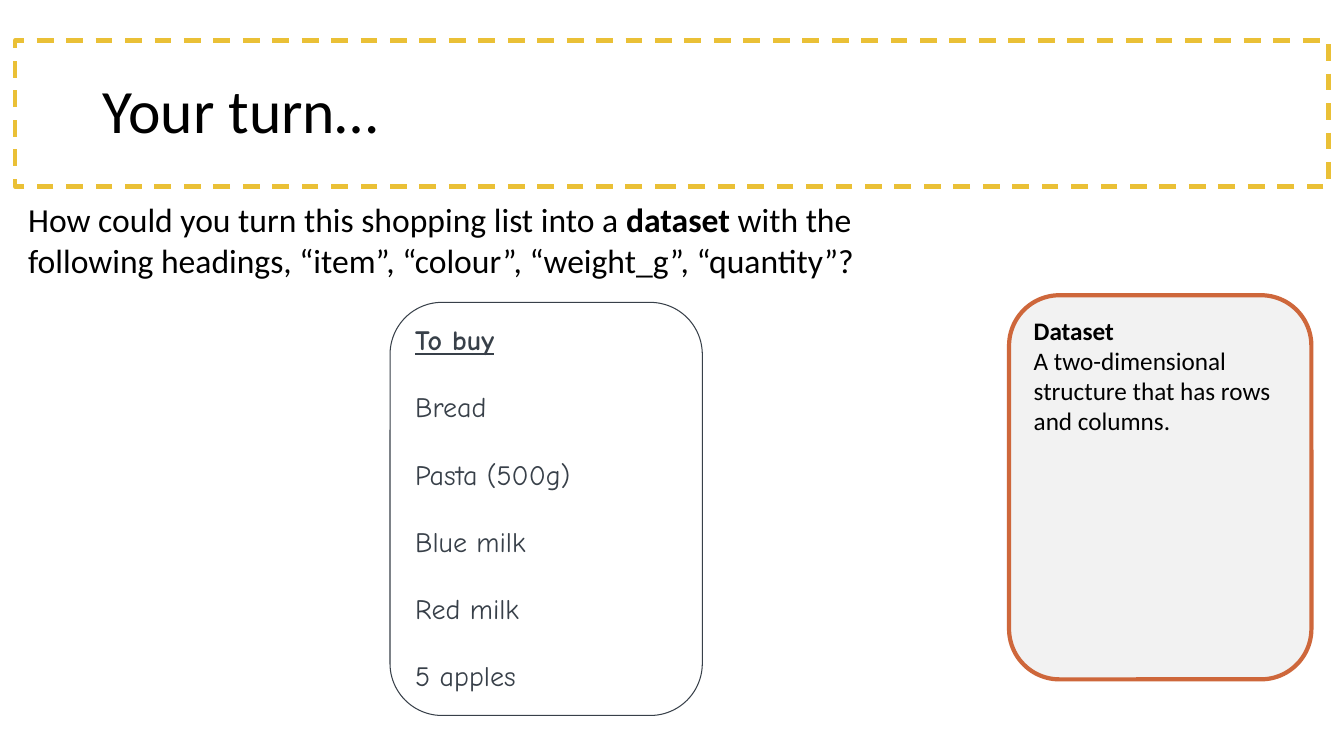
from pptx import Presentation
from pptx.dml.color import RGBColor
from pptx.enum.dml import MSO_LINE_DASH_STYLE as Dash
from pptx.enum.shapes import MSO_SHAPE as Shape
from pptx.enum.text import MSO_ANCHOR as Anchor, PP_ALIGN as Align
from pptx.util import Cm, Pt

COLOURS = {
    "text": "000000",
    "frame": "EAC036",
    "card": "F2F2F2",
    "card_line": "CE673B",
    "list": "384049",
}


def add_outline(kind, left, top, width, height, line, weight, fill=None):
    box = page.shapes.add_shape(kind, Cm(left), Cm(top), Cm(width), Cm(height))
    box.shadow.inherit = False
    if fill:
        box.fill.solid()
        box.fill.fore_color.rgb = RGBColor.from_string(COLOURS[fill])
    else:
        box.fill.background()
    box.line.color.rgb = RGBColor.from_string(COLOURS[line])
    box.line.width = Pt(weight)
    box.text_frame.word_wrap = True
    box.text_frame.vertical_anchor = Anchor.TOP
    return box


def add_span(para, text, size, bold=False, colour="text", font="Calibri"):
    para.alignment = Align.LEFT
    span = para.add_run()
    span.text = text
    span.font.name = font
    span.font.size = Pt(size)
    span.font.bold = bold
    span.font.color.rgb = RGBColor.from_string(COLOURS[colour])
    return span


deck = Presentation()
deck.slide_width, deck.slide_height = Cm(33.87), Cm(19.05)
page = deck.slides.add_slide(deck.slide_layouts[5])

frame = add_outline(Shape.RECTANGLE, 0.38, 1.02, 33.1, 3.68, "frame", 3)
frame.line.dash_style = Dash.DASH

title = page.shapes.title
title.left, title.top, title.width, title.height = Cm(2.34), Cm(1.02), Cm(29.21), Cm(3.68)
title.text_frame.vertical_anchor = Anchor.MIDDLE
title_para = title.text_frame.paragraphs[0]
title_para.line_spacing = 0.9
add_span(title_para, "Your turn…", 44)

question = page.shapes.add_textbox(Cm(0.46), Cm(4.9), Cm(24.28), Cm(2.31))
question.text_frame.word_wrap = True
question_para = question.text_frame.paragraphs[0]
add_span(question_para, "How could you turn this shopping list into a ", 24)
add_span(question_para, "dataset ", 24, bold=True)
add_span(question_para, "with the following headings, “item”, “colour”, “weight_g”, “quantity”?", 24)

definition = add_outline(Shape.ROUNDED_RECTANGLE, 25.43, 7.44, 7.62, 9.68, "card_line", 3, "card")
add_span(definition.text_frame.paragraphs[0], "Dataset", 18, bold=True)
add_span(definition.text_frame.add_paragraph(), "A two-dimensional structure that has rows and columns.", 18)

shopping = add_outline(Shape.ROUNDED_RECTANGLE, 9.83, 7.62, 7.87, 10.41, "list", 0.75)
heading = add_span(shopping.text_frame.paragraphs[0], "To buy", 20, True, "list", "Comic Neue")
heading.font.underline = True
for item in ("Bread", "Pasta (500g)", "Blue milk", "Red milk", "5 apples"):
    para = shopping.text_frame.add_paragraph()
    para.space_before = Pt(24)
    add_span(para, item, 20, False, "list", "Comic Neue")

deck.save("out.pptx")
